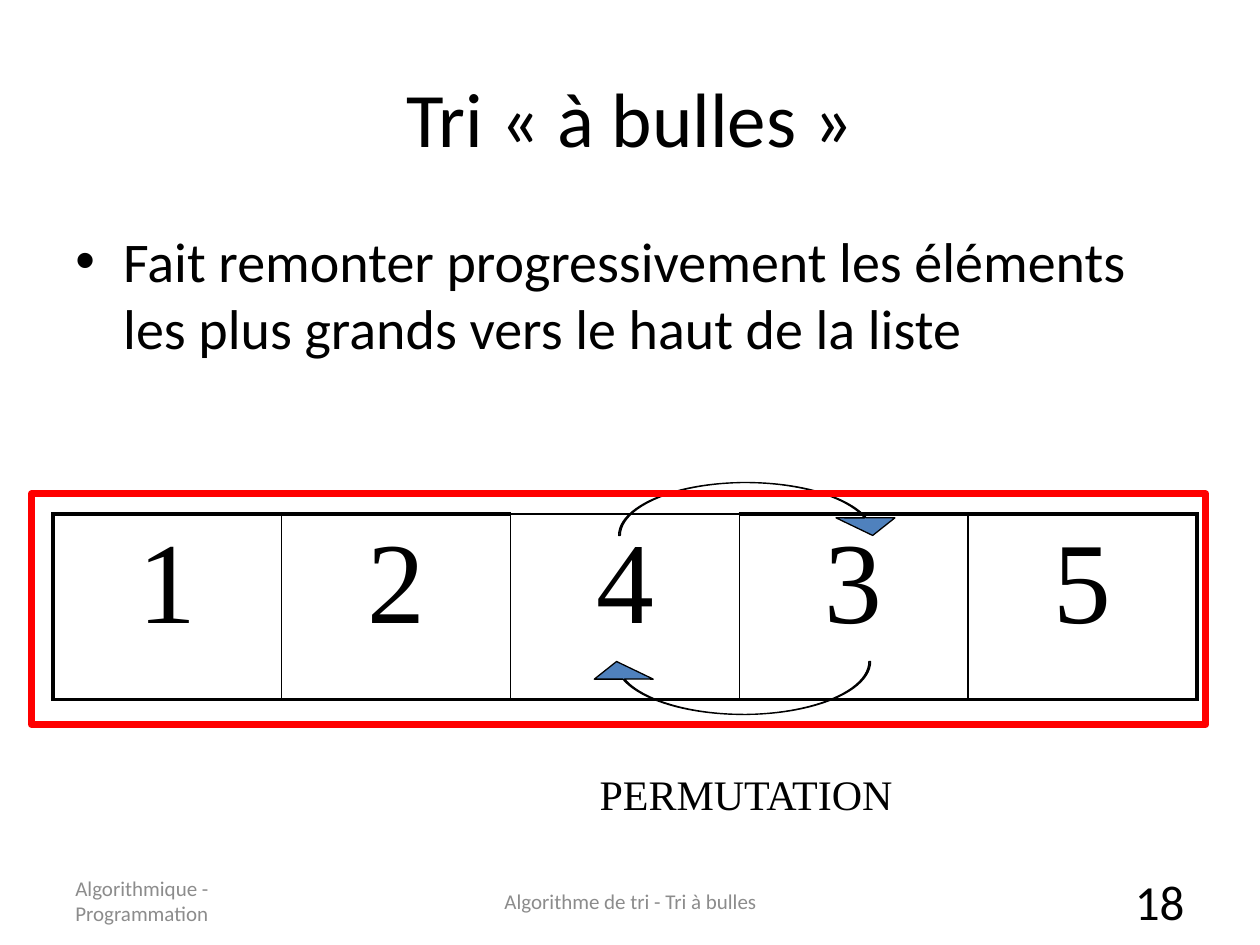
"""Build the bubble sort slide showing the swap of 4 and 3."""
from lxml import etree
from pptx import Presentation
from pptx.dml.color import RGBColor
from pptx.enum.shapes import MSO_SHAPE
from pptx.enum.text import MSO_ANCHOR, PP_ALIGN
from pptx.oxml.ns import qn
from pptx.util import Inches, Pt

LEFT, CENTER, RIGHT = PP_ALIGN.LEFT, PP_ALIGN.CENTER, PP_ALIGN.RIGHT
TOP, MIDDLE = MSO_ANCHOR.TOP, MSO_ANCHOR.MIDDLE
CURVED_ARROW, RECTANGLE = MSO_SHAPE.CURVED_UP_ARROW, MSO_SHAPE.RECTANGLE

WIDTH, HEIGHT = 10, 7.5
MARGIN = 0.5
INNER = WIDTH - 2 * MARGIN
COLORS = {"text": "000000", "muted": "8C8C8C", "arrow": "4F81BD", "frame": "FF0000"}
SANS, SERIF = "Calibri", "Times New Roman"
THIN, THICK = 1, 2.25

TITLE = "Tri « à bulles »"
EXPLANATION = "Fait remonter progressivement les éléments les plus grands vers le haut de la liste"
SWAP_LABEL = "PERMUTATION"
NUMBERS = ["1", "2", "4", "3", "5"]
SWAPPED = NUMBERS.index("4")
LIST_BOX = (0.42, 4.08, 9.08, 1.47)
FRAME_BOX = (0.25, 3.92, 9.32, 1.83)
SWAP_ARROWS = [((4.91, 3.83, 2.25, 0.42), "flipV"), ((4.66, 5.25, 2.25, 0.42), "flipH")]
ARROW_ADJUSTMENTS = (0.032, 1.112, 0.333)
FOOTER_TOP, FOOTER_HEIGHT = 6.95, 0.4
FOOTER = [
    ("Algorithmique - Programmation", MARGIN, 2.33, LEFT, 12, "muted"),
    ("Algorithme de tri - Tri à bulles", 3.42, 3.17, CENTER, 12, "muted"),
    ("18", 7.17, 2.33, RIGHT, 28, "text"),
]


def rgb(key):
    return RGBColor.from_string(COLORS[key])


def inches(box):
    return [Inches(length) for length in box]


def write(frame, words, size, font, color="text", align=LEFT):
    frame.text = words
    paragraph = frame.paragraphs[0]
    paragraph.alignment = align
    style = paragraph.runs[0].font
    style.size, style.name = Pt(size), font
    style.color.rgb = rgb(color)
    return paragraph


def add_text(slide, box, words, size, font, color="text", align=LEFT, anchor=TOP, wrap=True):
    frame = slide.shapes.add_textbox(*inches(box)).text_frame
    frame.word_wrap = wrap
    frame.vertical_anchor = anchor
    return write(frame, words, size, font, color, align)


def space_before(paragraph, percent):
    spacing = etree.SubElement(paragraph._p.get_or_add_pPr(), qn("a:spcBef"))
    etree.SubElement(spacing, qn("a:spcPct"), val=str(percent * 1000))


def add_bullet(paragraph, indent):
    properties = paragraph._p.get_or_add_pPr()
    properties.set("marL", str(Inches(indent)))
    properties.set("indent", str(-Inches(indent)))
    etree.SubElement(properties, qn("a:buFont"), typeface="Arial")
    etree.SubElement(properties, qn("a:buChar"), char="•")


def set_borders(cell, widths):
    properties = cell._tc.get_or_add_tcPr()
    for side, width in widths.items():
        line = etree.SubElement(properties, qn(f"a:ln{side}"), w=str(Pt(width)))
        fill = etree.SubElement(line, qn("a:solidFill"))
        etree.SubElement(fill, qn("a:srgbClr"), val=COLORS["text"])


def add_list(slide):
    last = len(NUMBERS) - 1
    table = slide.shapes.add_table(1, len(NUMBERS), *inches(LIST_BOX)).table
    table.first_row = table.horz_banding = False
    for index, number in enumerate(NUMBERS):
        cell = table.cell(0, index)
        set_borders(cell, {
            "L": THICK if index == 0 else THIN,
            "R": THICK if index == last else THIN,
            "T": THIN if index == SWAPPED else THICK,
            "B": THICK,
        })
        cell.fill.background()
        space_before(write(cell.text_frame, number, 66, SERIF, align=CENTER), 20)


def add_outline(slide, kind, box, color, width):
    shape = slide.shapes.add_shape(kind, *inches(box))
    shape.shadow.inherit = False
    shape.fill.background()
    shape.line.color.rgb = rgb(color)
    shape.line.width = Pt(width)
    return shape


def add_swap_arrow(slide, box, flip):
    arrow = add_outline(slide, CURVED_ARROW, box, "text", 0.75)
    arrow.fill.solid()
    arrow.fill.fore_color.rgb = rgb("arrow")
    for index, value in enumerate(ARROW_ADJUSTMENTS):
        arrow.adjustments[index] = value
    arrow._element.spPr.find(qn("a:xfrm")).set(flip, "1")


def main():
    deck = Presentation()
    deck.slide_width, deck.slide_height = Inches(WIDTH), Inches(HEIGHT)
    slide = deck.slides.add_slide(deck.slide_layouts[6])

    add_text(slide, (MARGIN, 0.3, INNER, 1.25), TITLE, 44, SANS, align=CENTER, anchor=MIDDLE)
    explanation = add_text(slide, (MARGIN, 1.75, INNER, 4.95), EXPLANATION, 32, SANS)
    space_before(explanation, 20)
    add_bullet(explanation, 0.38)
    add_list(slide)
    for box, flip in SWAP_ARROWS:
        add_swap_arrow(slide, box, flip)
    add_text(slide, (4.66, 6.05, 2.59, 0.5), SWAP_LABEL, 24, SERIF, wrap=False)
    for words, left, width, align, size, color in FOOTER:
        box = (left, FOOTER_TOP, width, FOOTER_HEIGHT)
        add_text(slide, box, words, size, SANS, color, align, MIDDLE)
    add_outline(slide, RECTANGLE, FRAME_BOX, "frame", 4)
    deck.save("out.pptx")


if __name__ == "__main__":
    main()
